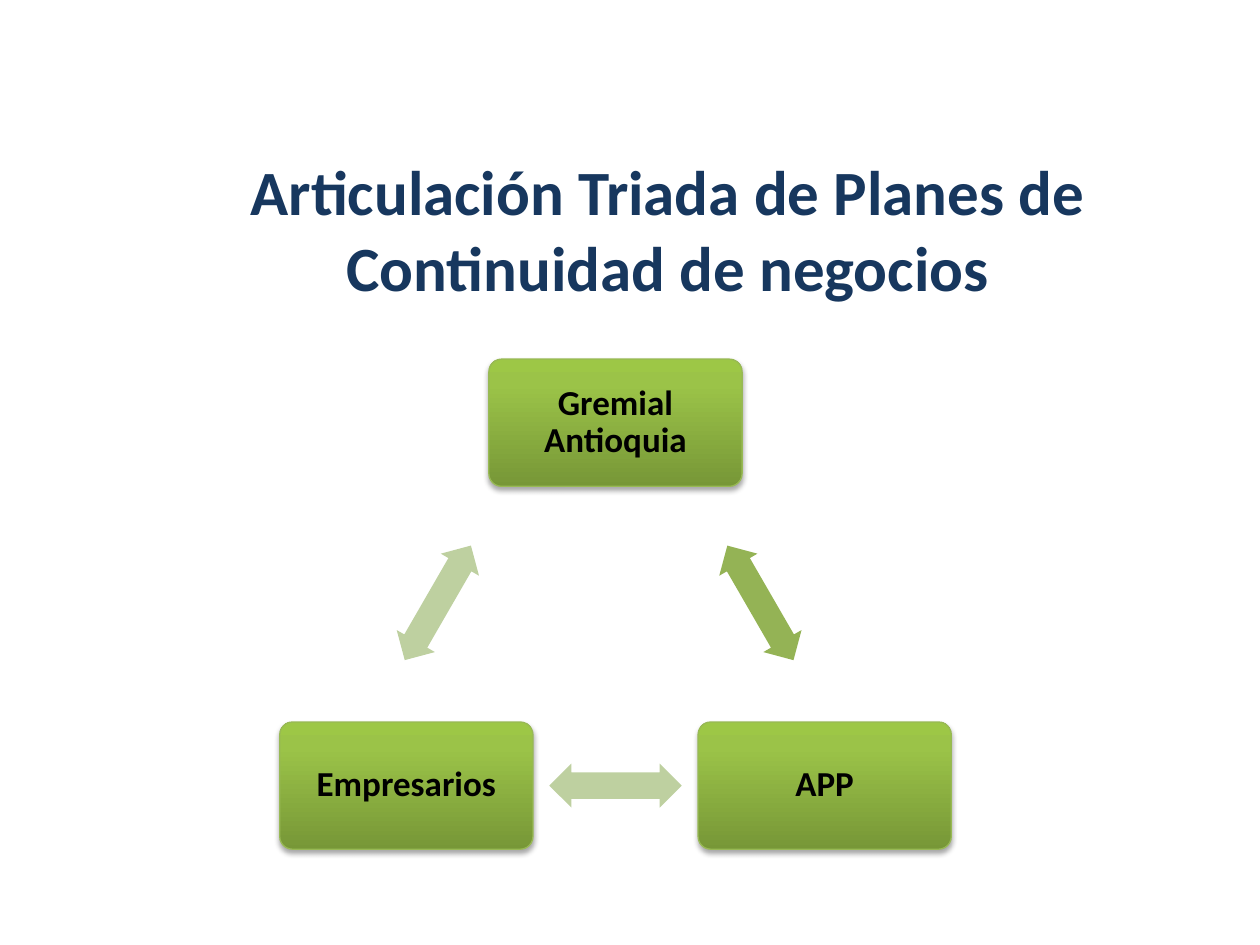
from copy import deepcopy

from lxml.etree import SubElement
from pptx import Presentation
from pptx.dml.color import RGBColor
from pptx.enum.shapes import MSO_SHAPE as Preset
from pptx.enum.text import MSO_ANCHOR as Anchor, MSO_AUTO_SIZE as AutoSize, PP_ALIGN as Align
from pptx.oxml.ns import qn
from pptx.util import Inches, Pt

TITLE = "Articulación Triada de Planes de Continuidad de negocios"
NODES = [
    ("Gremial Antioquia", 4.885, 3.355),
    ("APP", 6.545, 6.235),
    ("Empresarios", 3.225, 6.235),
]
ARROWS = [
    (6.035, 4.785, 60, "strong"),
    (4.885, 6.235, 180, "soft"),
    (3.475, 4.785, 300, "soft"),
]
NODE_SIZE = (2.01, 1.01)
ARROW_SIZE = (1.05, 0.35)
THEME = {
    "font": "Calibri", "title_size": 36, "node_size": 20,
    "title": "17375E", "text": "000000", "line": "98B955",
    "strong": "94B355", "soft": "BED0A0", "shadow": "000000",
    "gradient": [(0, "779737"), (80, "9BC348"), (100, "9DC746")],
}


def color(name):
    return RGBColor.from_string(THEME[name])


def style(para, size, ink):
    para.alignment = Align.CENTER
    font = para.font
    font.name, font.size, font.bold = THEME["font"], Pt(THEME[size]), True
    font.color.rgb = color(ink)


def add_centred(page, preset, center_x, center_y, size):
    width, height = size
    shape = page.shapes.add_shape(
        preset, Inches(center_x - width / 2), Inches(center_y - height / 2),
        Inches(width), Inches(height))
    shape.shadow.inherit = False
    return shape


def fill_gradient(shape):
    shape.fill.gradient()
    shape.fill.gradient_angle = 90
    stops = shape._element.spPr.find(".//" + qn("a:gsLst"))
    stops.insert(1, deepcopy(stops[0]))
    for stop, (position, value) in zip(shape.fill.gradient_stops, THEME["gradient"]):
        stop.position = position / 100
        stop.color.rgb = RGBColor.from_string(value)


def add_shadow(shape):
    effects = shape._element.spPr.find(qn("a:effectLst"))
    shadow = SubElement(effects, qn("a:outerShdw"), blurRad=str(Pt(3.1)),
                        dist=str(Pt(1.8)), dir="5400000", rotWithShape="0")
    ink = SubElement(shadow, qn("a:srgbClr"), val=THEME["shadow"])
    SubElement(ink, qn("a:alpha"), val="35000")


def add_node(page, label, center_x, center_y):
    box = add_centred(page, Preset.ROUNDED_RECTANGLE, center_x, center_y, NODE_SIZE)
    box.adjustments[0] = 0.1
    fill_gradient(box)
    box.line.color.rgb = color("line")
    box.line.width = Pt(0.75)
    add_shadow(box)
    frame = box.text_frame
    frame.word_wrap = True
    frame.vertical_anchor = Anchor.MIDDLE
    frame.margin_left = frame.margin_right = Inches(0.08)
    frame.margin_top = frame.margin_bottom = Inches(0.08)
    frame.text = label
    para = frame.paragraphs[0]
    para.line_spacing = 0.9
    style(para, "node_size", "text")


def add_arrow(page, center_x, center_y, angle, tone):
    arrow = add_centred(page, Preset.LEFT_RIGHT_ARROW, center_x, center_y, ARROW_SIZE)
    arrow.adjustments[0] = 0.6
    arrow.adjustments[1] = 0.5
    arrow.rotation = angle
    arrow.fill.solid()
    arrow.fill.fore_color.rgb = color(tone)
    arrow.line.fill.background()


def add_title(page):
    title = page.shapes.title
    title.left, title.top = Inches(1.28), Inches(1.16)
    title.width, title.height = Inches(8.04), Inches(1.31)
    frame = title.text_frame
    frame.word_wrap = True
    frame.auto_size = AutoSize.NONE
    frame.vertical_anchor = Anchor.TOP
    frame.text = TITLE
    style(frame.paragraphs[0], "title_size", "title")


def main():
    deck = Presentation()
    deck.slide_width, deck.slide_height = Inches(10), Inches(7.5)
    page = deck.slides.add_slide(deck.slide_layouts[5])
    add_title(page)
    for node, arrow in zip(NODES, ARROWS):
        add_node(page, *node)
        add_arrow(page, *arrow)
    deck.save("out.pptx")


if __name__ == "__main__":
    main()
